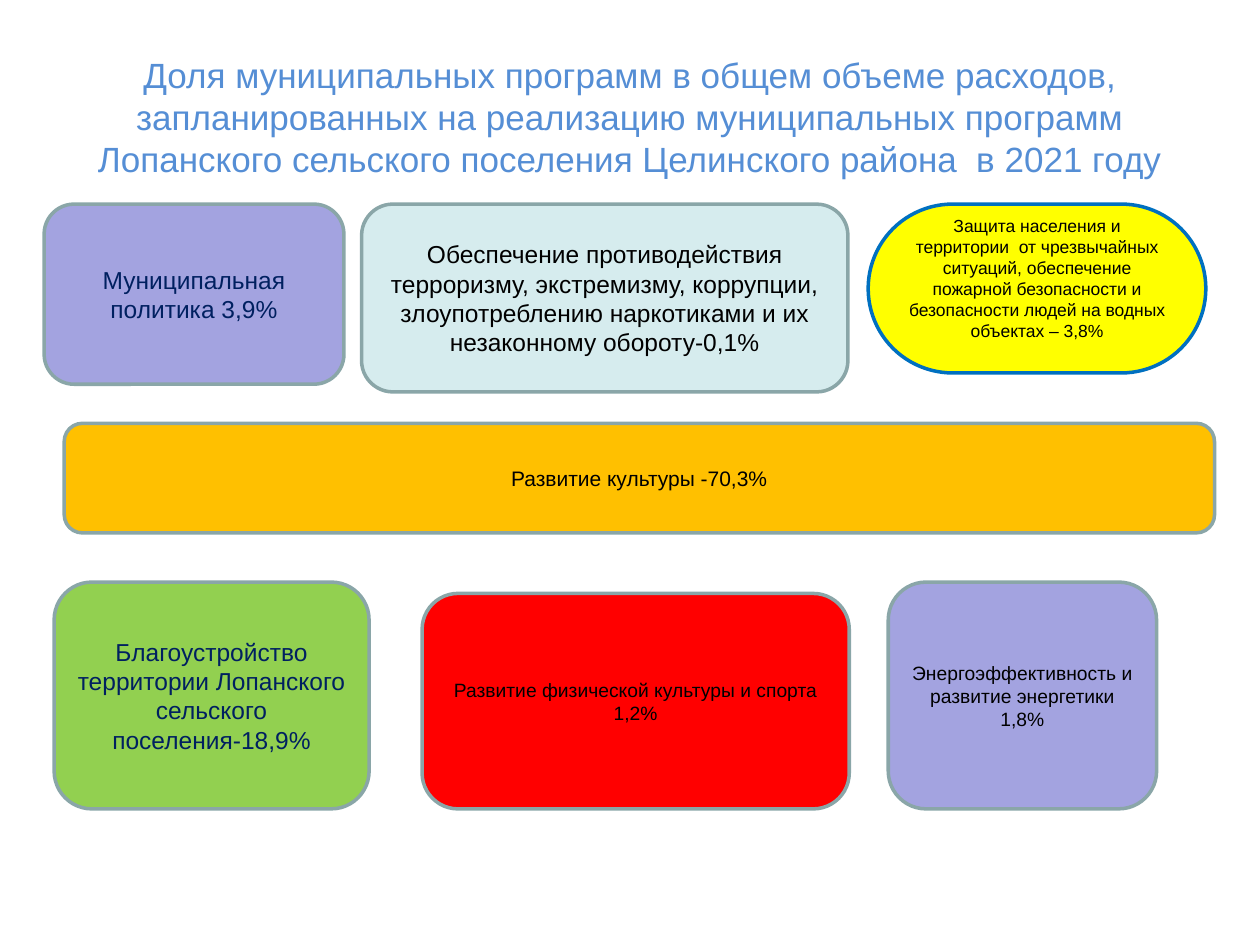
from dataclasses import dataclass

from pptx import Presentation
from pptx.dml.color import RGBColor as Color
from pptx.enum.shapes import MSO_SHAPE as Shape
from pptx.enum.text import MSO_ANCHOR as Anchor, PP_ALIGN as Align
from pptx.util import Inches, Pt


@dataclass(frozen=True)
class Theme:
    font: str = "Arial"
    title: str = "558ED5"
    navy: str = "002060"
    black: str = "000000"
    border: str = "8AA6A8"
    blue_border: str = "0070C0"
    lilac: str = "A3A3E0"
    ice: str = "D6ECEE"
    yellow: str = "FFFF00"
    orange: str = "FFC000"
    green: str = "92D050"
    red: str = "FF0000"
    title_size: int = 20
    large: int = 14
    medium: int = 12
    small: int = 11
    tiny: int = 10
    border_width: int = 2


theme = Theme()
COLUMNS, ROWS = 100, 75

presentation = Presentation()
presentation.slide_width, presentation.slide_height = Inches(10), Inches(7.5)
column = presentation.slide_width / COLUMNS
row = presentation.slide_height / ROWS
slide = presentation.slides.add_slide(presentation.slide_layouts[6])


def place(left, top, width, height):
    """Turn grid columns and rows into slide lengths."""
    return (round(left * column), round(top * row),
            round(width * column), round(height * row))


def write(shape, text, size, color):
    """Fill a shape with one centred, wrapped paragraph."""
    frame = shape.text_frame
    frame.word_wrap = True
    frame.vertical_anchor = Anchor.MIDDLE
    paragraph = frame.paragraphs[0]
    paragraph.text = text
    paragraph.alignment = Align.CENTER
    paragraph.font.name = theme.font
    paragraph.font.size = Pt(size)
    paragraph.font.color.rgb = Color.from_string(color)


title = slide.shapes.add_textbox(*place(5, 3, 90, 12.5))
write(title,
      "Доля муниципальных программ в общем объеме расходов, "
      "запланированных на реализацию муниципальных программ "
      "Лопанского сельского поселения Целинского района  в 2021 году",
      theme.title_size, theme.title)

TOP, MIDDLE, BOTTOM = 16.2, 33.6, 64.2  # the bottom row is aligned by its lower edge
TALL, SHORT = 18, 17.1

# text, (left, top, width, height), fill, type size, text colour
programs = [
    ("Муниципальная политика 3,9%",
     (3.5, TOP, 23.8, 14.3), theme.lilac, theme.large, theme.navy),
    ("Благоустройство территории Лопанского сельского поселения-18,9%",
     (4.3, BOTTOM - TALL, 25, TALL), theme.green, theme.large, theme.navy),
    ("Обеспечение противодействия терроризму, экстремизму, коррупции, "
     "злоупотреблению наркотиками и их незаконному обороту-0,1%",
     (28.7, TOP, 38.6, 14.9), theme.ice, theme.large, theme.black),
    ("Защита населения и территории  от чрезвычайных ситуаций, обеспечение "
     "пожарной безопасности и безопасности людей на водных объектах – 3,8%",
     (68.9, TOP, 26.8, 13.4), theme.yellow, theme.tiny, theme.black),
    ("Энергоэффективность и развитие энергетики 1,8%",
     (70.5, BOTTOM - TALL, 21.3, TALL), theme.lilac, theme.small, theme.black),
    ("Развитие культуры -70,3%",
     (5.1, MIDDLE, 91.3, 8.7), theme.orange, theme.medium, theme.black),
    ("Развитие физической культуры и спорта 1,2%",
     (33.5, BOTTOM - SHORT, 33.9, SHORT), theme.red, theme.small, theme.black),
]

for text, box, fill, size, color in programs:
    card = slide.shapes.add_shape(Shape.ROUNDED_RECTANGLE, *place(*box))
    card.shadow.inherit = False
    card.fill.solid()
    card.fill.fore_color.rgb = Color.from_string(fill)
    border = theme.border
    if fill == theme.yellow:
        border = theme.blue_border
        card.adjustments[0] = 0.5
        card.text_frame.margin_bottom = Inches(0.21)
    card.line.color.rgb = Color.from_string(border)
    card.line.width = Pt(theme.border_width)
    write(card, text, size, color)

presentation.save("out.pptx")
